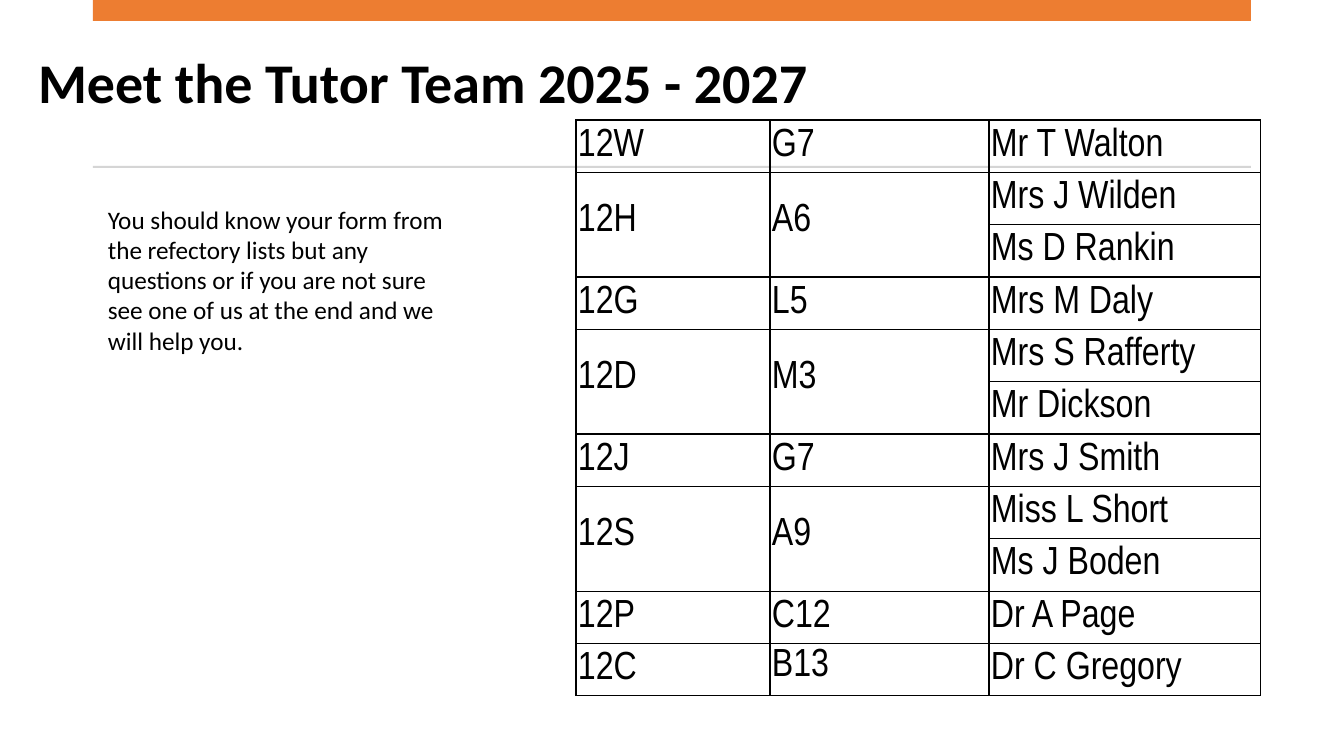
from lxml.etree import SubElement
from pptx import Presentation
from pptx.dml.color import RGBColor
from pptx.enum.shapes import MSO_SHAPE as Preset
from pptx.enum.text import MSO_ANCHOR as Anchor, MSO_AUTO_SIZE as AutoSize, PP_ALIGN as Align
from pptx.oxml.ns import qn
from pptx.util import Emu, Pt

PX_PER_INCH = 100.8
BLACK = "000000"
ORANGE = "ED7D31"
GREY = "D5D5D5"
COLUMN_WIDTHS = (194, 219, 272)
TUTOR_GROUPS = [
    ("12W", "G7", ["Mr T Walton"]),
    ("12H", "A6", ["Mrs J Wilden", "Ms D Rankin"]),
    ("12G", "L5", ["Mrs M Daly"]),
    ("12D", "M3", ["Mrs S Rafferty", "Mr Dickson"]),
    ("12J", "G7", ["Mrs J Smith"]),
    ("12S", "A9", ["Miss L Short", "Ms J Boden"]),
    ("12P", "C12", ["Dr A Page"]),
    ("12C", "B13", ["Dr C Gregory"]),
]
ADVICE = (
    "You should know your form from the refectory lists but any questions "
    "or if you are not sure see one of us at the end and we will help you."
)


def px(length):
    return Emu(round(length * 914400 / PX_PER_INCH))


def color(hex_string):
    return RGBColor.from_string(hex_string)


def format_runs(frame, font_name, size, bold=False):
    for paragraph in frame.paragraphs:
        for run in paragraph.runs:
            run.font.name = font_name
            run.font.size = Pt(size)
            run.font.bold = bold
            run.font.color.rgb = color(BLACK)


def set_title(slide, text):
    title = slide.shapes.title
    title.left, title.top, title.width, title.height = map(px, (28, 26, 1158, 119))
    frame = title.text_frame
    frame.text = text
    frame.word_wrap = True
    frame.vertical_anchor = Anchor.MIDDLE
    frame.paragraphs[0].alignment = Align.LEFT
    frame.paragraphs[0].line_spacing = 0.9
    format_runs(frame, "Calibri", 40, bold=True)


def add_bar(slide, top, height, fill):
    bar = slide.shapes.add_shape(Preset.RECTANGLE, px(93), px(top), px(1158), px(height))
    bar.shadow.inherit = False
    bar.fill.solid()
    bar.fill.fore_color.rgb = color(fill)
    bar.line.fill.background()


def add_advice(slide):
    advice = slide.shapes.add_textbox(px(98), px(199), px(367), px(163))
    frame = advice.text_frame
    frame.word_wrap = True
    frame.auto_size = AutoSize.SHAPE_TO_FIT_TEXT
    frame.text = ADVICE
    format_runs(frame, "Calibri", 18)


def outline_cell(cell):
    properties = cell._tc.get_or_add_tcPr()
    for side in ("a:lnL", "a:lnR", "a:lnT", "a:lnB"):
        border = SubElement(properties, qn(side), w=str(Pt(1)))
        border_fill = SubElement(border, qn("a:solidFill"))
        SubElement(border_fill, qn("a:srgbClr"), val=BLACK)
    cell.fill.background()


def fill_cell(cell, text, anchor):
    cell.margin_left = cell.margin_top = cell.margin_right = px(2)
    cell.margin_bottom = px(8)
    cell.vertical_anchor = anchor
    cell.text_frame.text = text
    format_runs(cell.text_frame, "Arial Narrow", 28)


def add_tutor_table(slide):
    row_count = sum(len(tutors) for _, _, tutors in TUTOR_GROUPS)
    table = slide.shapes.add_table(
        row_count, 3, px(576), px(120), px(sum(COLUMN_WIDTHS)), px(576)
    ).table
    table.first_row = False
    table.horz_banding = False
    for column, width in zip(table.columns, COLUMN_WIDTHS):
        column.width = px(width)
    for cell in table.iter_cells():
        outline_cell(cell)

    row = 0
    for form, room, tutors in TUTOR_GROUPS:
        last_row = row + len(tutors) - 1
        for column, label in enumerate((form, room)):
            cell = table.cell(row, column)
            if last_row > row:
                cell.merge(table.cell(last_row, column))
            centred = last_row > row or label == "B13"
            fill_cell(cell, label, Anchor.MIDDLE if centred else Anchor.BOTTOM)
        for offset, tutor in enumerate(tutors):
            fill_cell(table.cell(row + offset, 2), tutor, Anchor.BOTTOM)
        row = last_row + 1


def main():
    deck = Presentation()
    deck.slide_width, deck.slide_height = px(1344), px(756)
    slide = deck.slides.add_slide(deck.slide_layouts[5])
    set_title(slide, "Meet the Tutor Team 2025 - 2027")
    add_bar(slide, 0, 21, ORANGE)
    add_bar(slide, 166, 2, GREY)
    add_tutor_table(slide)
    add_advice(slide)
    deck.save("out.pptx")


if __name__ == "__main__":
    main()
